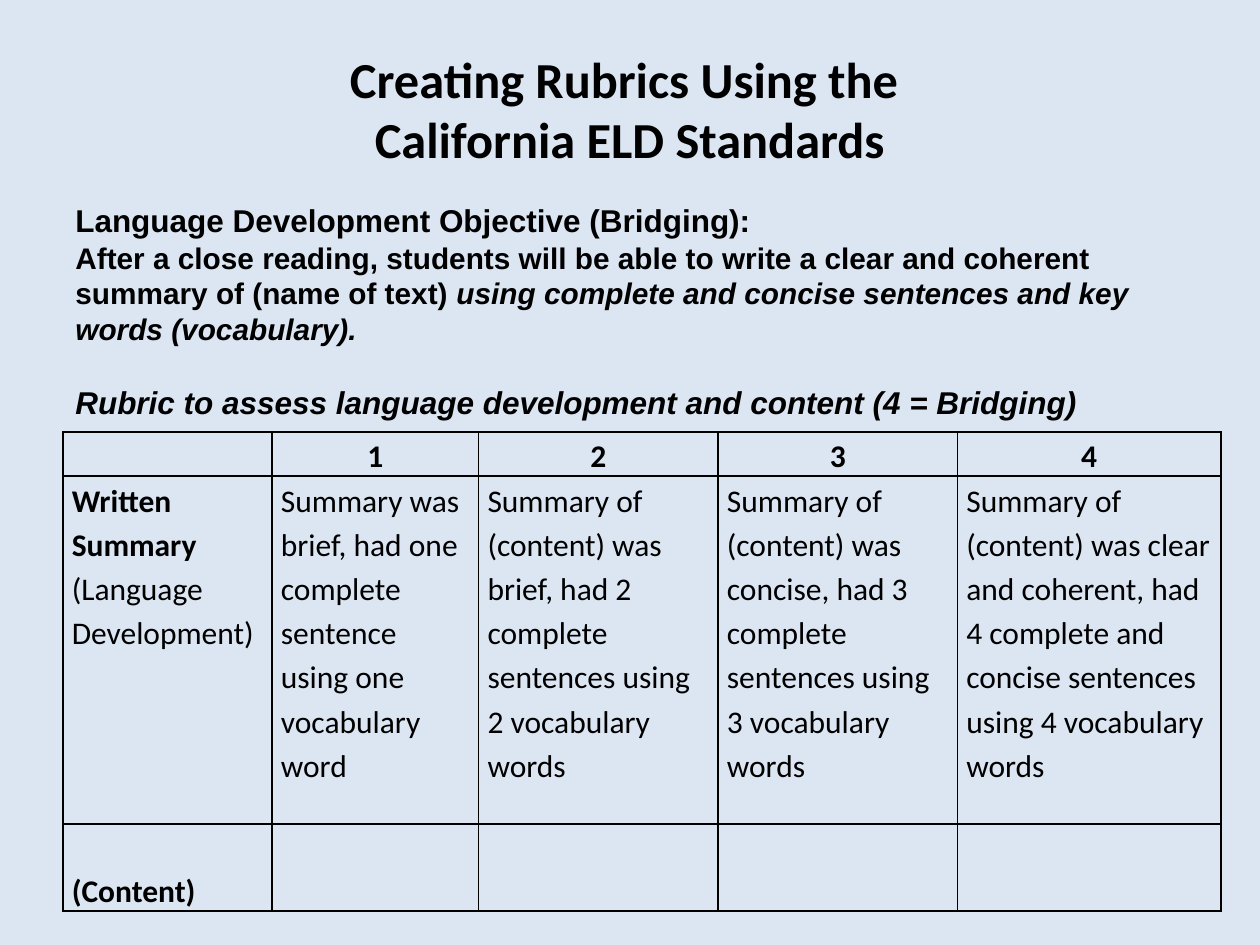
import pptx
import pptx.dml.color
import pptx.enum.text
import pptx.oxml.ns
import pptx.util
from lxml import etree
from pptx.util import Inches

COLORS = {"background": "DCE6F2", "ink": "000000"}
ALIGN = pptx.enum.text.PP_ALIGN
ANCHOR = pptx.enum.text.MSO_ANCHOR

COLUMN_WIDTHS = [1.66, 1.64, 1.9, 1.9, 2.09]
ROW_HEIGHTS = [0.35, 2.76, 0.69]
THIN, THICK = 1, 1.5

# Each cell is a list of (text, bold) paragraphs.
RUBRIC = [
    [[]] + [[(str(score), True)] for score in range(1, 5)],
    [
        [("Written Summary", True), ("(Language Development)", False)],
        [("Summary was brief, had one complete sentence using one vocabulary word", False)],
        [("Summary of (content) was brief, had 2 complete sentences using 2 vocabulary words", False)],
        [("Summary of (content) was concise, had 3 complete sentences using 3 vocabulary words", False)],
        [("Summary of (content) was clear and coherent, had 4 complete and concise sentences "
          "using 4 vocabulary words", False)],
    ],
    [[("(Content)", True)], [], [], [], []],
]


def rgb(name):
    return pptx.dml.color.RGBColor.from_string(COLORS[name])


def add_run(paragraph, text, font, size, bold=True, italic=False):
    run = paragraph.add_run()
    run.text = text
    run.font.name = font
    run.font.size = pptx.util.Pt(size)
    run.font.bold = bold
    run.font.italic = italic
    run.font.color.rgb = rgb("ink")


def next_paragraph(text_frame, index):
    return text_frame.paragraphs[0] if index == 0 else text_frame.add_paragraph()


def add_text_frame(slide, left, top, width, height):
    box = slide.shapes.add_textbox(Inches(left), Inches(top), Inches(width), Inches(height))
    box.text_frame.word_wrap = True
    box.text_frame.vertical_anchor = ANCHOR.MIDDLE
    return box.text_frame


def add_title(slide):
    paragraph = add_text_frame(slide, 0.5, 0.3, 9, 1.12).paragraphs[0]
    paragraph.alignment = ALIGN.CENTER
    add_run(paragraph, "Creating Rubrics Using the ", "Calibri", 28.8)
    paragraph.add_line_break()
    add_run(paragraph, "California ELD Standards", "Calibri", 28.8)


def add_objective(slide):
    text_frame = add_text_frame(slide, 0.5, 1.51, 9, 1.92)
    paragraphs = [
        [("Language Development Objective (Bridging):", 18, False)],
        [("After a close reading, students will be able to write a clear and coherent "
          "summary of (name of text) ", 17, False),
         ("using complete and concise sentences and key words (vocabulary).", 17, True)],
        [("Rubric to assess language development and content (4 = Bridging)", 18, True)],
    ]
    for index, runs in enumerate(paragraphs):
        paragraph = next_paragraph(text_frame, index)
        for text, size, italic in runs:
            add_run(paragraph, text, "Arial", size, italic=italic)
    paragraph.space_before = pptx.util.Pt(21)


def set_borders(cell, widths):
    """Draw the cell's borders; widths maps L, R, T, B to points."""
    properties = cell._tc.get_or_add_tcPr()
    for side, width in widths.items():
        line = etree.SubElement(properties, pptx.oxml.ns.qn(f"a:ln{side}"), w=str(pptx.util.Pt(width)))
        fill = etree.SubElement(line, pptx.oxml.ns.qn("a:solidFill"))
        etree.SubElement(fill, pptx.oxml.ns.qn("a:srgbClr"), val=COLORS["ink"])


def fill_cell(cell, paragraphs, alignment):
    cell.margin_left = cell.margin_right = Inches(0.07)
    cell.margin_top = cell.margin_bottom = 0
    for index, (text, bold) in enumerate(paragraphs):
        paragraph = next_paragraph(cell.text_frame, index)
        paragraph.alignment = alignment
        paragraph.line_spacing = 1.15
        add_run(paragraph, text, "Calibri", 18, bold)


def add_rubric(slide):
    frame = slide.shapes.add_table(len(ROW_HEIGHTS), len(COLUMN_WIDTHS), Inches(0.5), Inches(3.43),
                                   Inches(sum(COLUMN_WIDTHS)), Inches(sum(ROW_HEIGHTS)))
    table = frame.table
    table.first_row = table.horz_banding = False
    for column, width in zip(table.columns, COLUMN_WIDTHS):
        column.width = Inches(width)
    for row, height in zip(table.rows, ROW_HEIGHTS):
        row.height = Inches(height)
    for r, row in enumerate(RUBRIC):
        for c, paragraphs in enumerate(row):
            cell = table.cell(r, c)
            fill_cell(cell, paragraphs, ALIGN.CENTER if r == 0 else ALIGN.LEFT)
            set_borders(cell, {
                "L": THICK if c == 1 else THIN,
                "R": THICK if c == 0 else THIN,
                "T": THICK if r == 1 else THIN,
                "B": THICK if r == 0 else THIN,
            })
            cell.fill.background()
    table.cell(2, 0).vertical_anchor = ANCHOR.BOTTOM


def main():
    presentation = pptx.Presentation()
    presentation.slide_width = Inches(10)
    presentation.slide_height = Inches(7.5)
    slide = presentation.slides.add_slide(presentation.slide_layouts[6])
    slide.background.fill.solid()
    slide.background.fill.fore_color.rgb = rgb("background")
    add_title(slide)
    add_rubric(slide)
    add_objective(slide)
    presentation.save("out.pptx")


if __name__ == "__main__":
    main()
